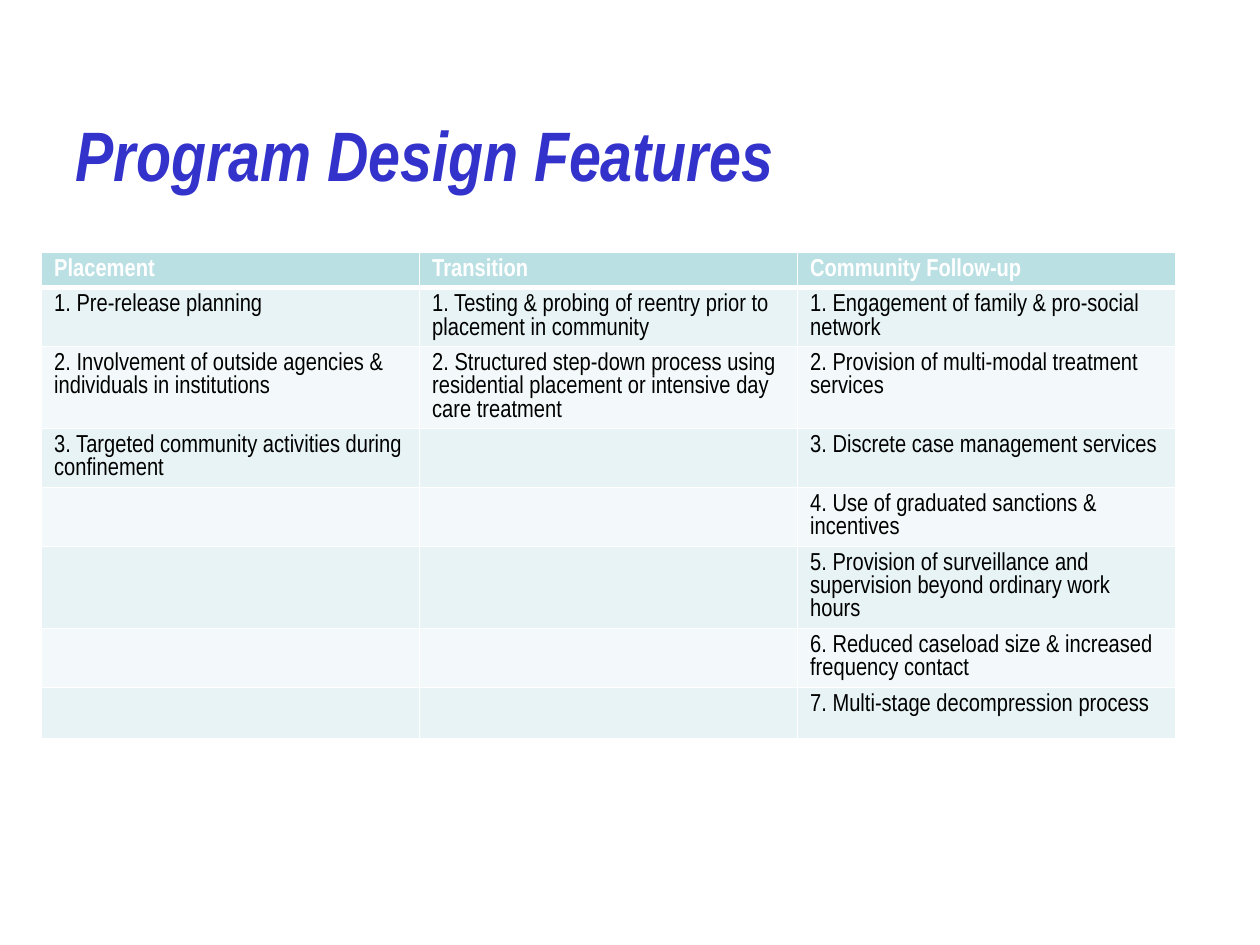
import pptx
import pptx.util
import pptx.dml.color
import pptx.enum.text
import pptx.oxml
from dataclasses import dataclass
from itertools import zip_longest
from pptx.oxml.ns import nsdecls

Inches, Pt = pptx.util.Inches, pptx.util.Pt
RGB = pptx.dml.color.RGBColor.from_string

TITLE = "Program Design Features"
PHASES = {
    "Placement": [
        "1. Pre-release planning",
        "2. Involvement of outside agencies & individuals in institutions",
        "3. Targeted community activities during confinement",
    ],
    "Transition": [
        "1. Testing & probing of reentry prior to placement in community",
        "2. Structured step-down process using residential placement or "
        "intensive day care treatment",
    ],
    "Community Follow-up": [
        "1. Engagement of family & pro-social network",
        "2. Provision of multi-modal treatment services",
        "3. Discrete case management services",
        "4. Use of graduated sanctions & incentives",
        "5. Provision of surveillance and supervision beyond ordinary work hours",
        "6. Reduced caseload size & increased frequency contact",
        "7. Multi-stage decompression process",
    ],
}


@dataclass(frozen=True)
class Theme:
    font: str = "Arial Narrow"
    title_size: int = 40
    cell_size: int = 14
    title: str = "3333CC"
    text: str = "000000"
    header_text: str = "FFFFFF"
    header_fill: str = "BBE0E3"
    bands: tuple = ("E7F3F4", "F3F9FA")
    border: str = "FFFFFF"
    thin: int = 1
    thick: int = 3


THEME = Theme()
HEADER_HEIGHT, ROW_HEIGHT, COLUMN_WIDTH = 0.15, 0.41, 3


def style_font(font, size, color, bold=False, italic=False):
    font.name, font.size = THEME.font, Pt(size)
    font.bold, font.italic = bold, italic
    font.color.rgb = RGB(color)


def add_borders(cell, top, bottom):
    """Draw all four cell edges; must run before the cell's fill is set."""
    widths = {"L": THEME.thin, "R": THEME.thin, "T": top, "B": bottom}
    tcPr = cell._tc.get_or_add_tcPr()
    for side, width in widths.items():
        tcPr.append(pptx.oxml.parse_xml(
            f'<a:ln{side} {nsdecls("a")} w="{Pt(width)}"><a:solidFill>'
            f'<a:srgbClr val="{THEME.border}"/></a:solidFill></a:ln{side}>'))


def add_title(s):
    sp = s.shapes.title
    sp.left, sp.top = Inches(0.5), Inches(0.78)
    sp.width, sp.height = Inches(9), Inches(0.88)
    tf = sp.text_frame
    tf.text = TITLE
    tf.vertical_anchor = pptx.enum.text.MSO_ANCHOR.MIDDLE
    p = tf.paragraphs[0]
    p.alignment = pptx.enum.text.PP_ALIGN.LEFT
    style_font(p.font, THEME.title_size, THEME.title, bold=True, italic=True)


def add_phase_table(s):
    rows = [tuple(PHASES), *zip_longest(*PHASES.values(), fillvalue="")]
    height = HEADER_HEIGHT + ROW_HEIGHT * (len(rows) - 1)
    table = s.shapes.add_table(
        len(rows), len(PHASES), Inches(0.33), Inches(2),
        Inches(COLUMN_WIDTH * len(PHASES)), Inches(height)).table
    for column in table.columns:
        column.width = Inches(COLUMN_WIDTH)
    for i, texts in enumerate(rows):
        header = i == 0
        table.rows[i].height = Inches(HEADER_HEIGHT if header else ROW_HEIGHT)
        fill = THEME.header_fill if header else THEME.bands[(i - 1) % 2]
        color = THEME.header_text if header else THEME.text
        for j, text in enumerate(texts):
            cell = table.cell(i, j)
            add_borders(cell, THEME.thick if i == 1 else THEME.thin,
                        THEME.thick if header else THEME.thin)
            cell.fill.solid()
            cell.fill.fore_color.rgb = RGB(fill)
            cell.text = text
            style_font(cell.text_frame.paragraphs[0].font,
                       THEME.cell_size, color, bold=header)


def main():
    prs = pptx.Presentation()
    prs.slide_width, prs.slide_height = Inches(10), Inches(7.5)
    s = prs.slides.add_slide(prs.slide_layouts[5])
    add_title(s)
    add_phase_table(s)
    prs.save("out.pptx")


if __name__ == "__main__":
    main()
